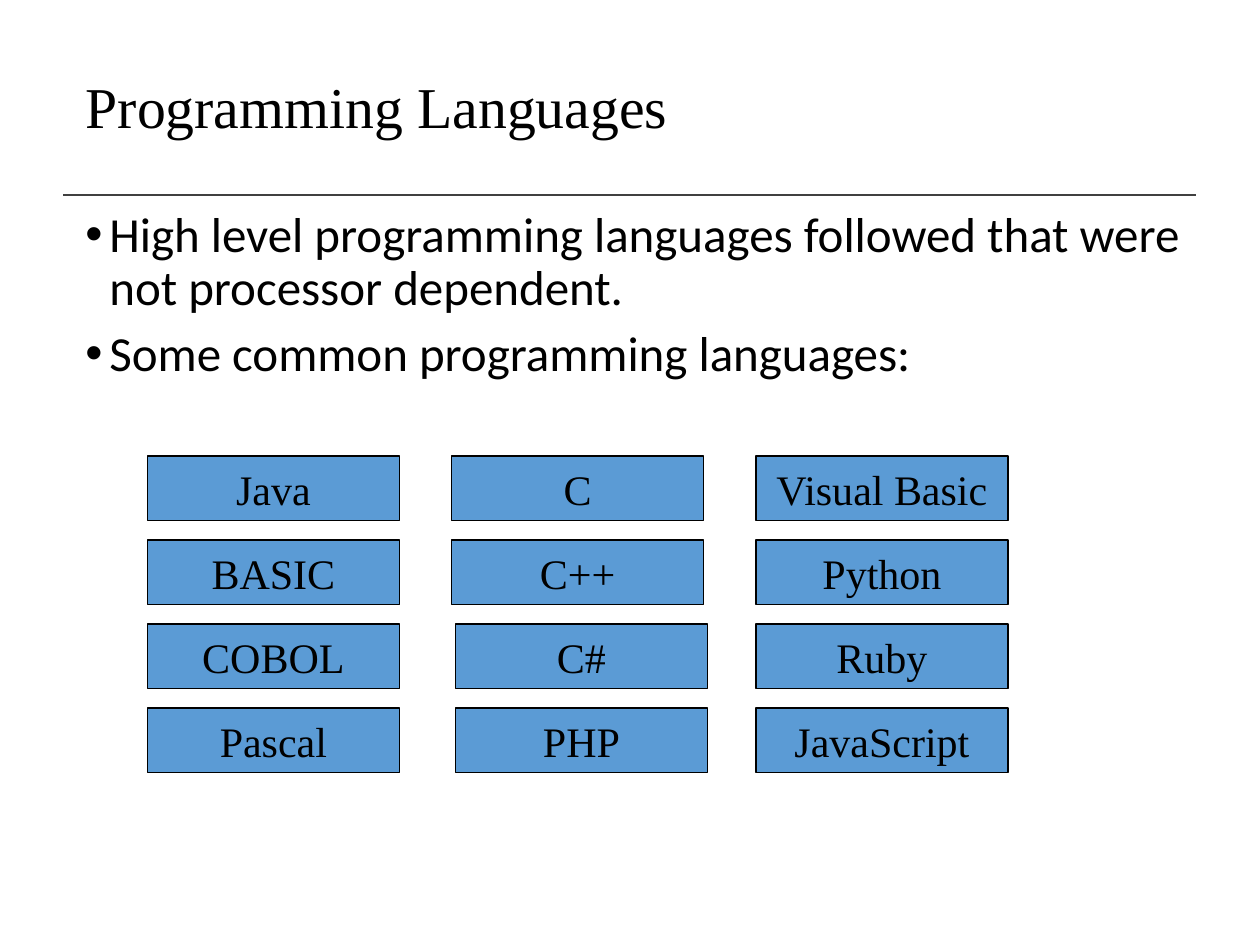
from lxml import etree
from pptx import Presentation
from pptx.dml.color import RGBColor
from pptx.enum.shapes import MSO_CONNECTOR, MSO_SHAPE
from pptx.enum.text import MSO_ANCHOR, MSO_AUTO_SIZE, PP_ALIGN
from pptx.oxml.ns import qn
from pptx.util import Inches, Pt

LINE = MSO_CONNECTOR.STRAIGHT
RECT = MSO_SHAPE.RECTANGLE
MIDDLE = MSO_ANCHOR.MIDDLE
LEFT, CENTER = PP_ALIGN.LEFT, PP_ALIGN.CENTER
NO_FIT, GROW = MSO_AUTO_SIZE.NONE, MSO_AUTO_SIZE.SHAPE_TO_FIT_TEXT

BLACK = RGBColor(0x00, 0x00, 0x00)
GRAY = RGBColor(0x40, 0x40, 0x40)
BLUE = RGBColor(0x5B, 0x9B, 0xD5)
SERIF, SANS = "Times New Roman", "Calibri"

POINTS = [
    "High level programming languages followed that were not processor dependent.",
    "Some common programming languages:",
]
COLUMNS = [
    ["Java", "BASIC", "COBOL", "Pascal"],
    ["C", "C++", "C#", "PHP"],
    ["Visual Basic", "Python", "Ruby", "JavaScript"],
]


def style(para, face, size, align):
    para.font.name = face
    para.font.size = Pt(size)
    para.font.color.rgb = BLACK
    para.alignment = align


def add_title(slide, left, top, width, height):
    title = slide.shapes.title
    title.left, title.top = Inches(left), Inches(top)
    title.width, title.height = Inches(width), Inches(height)
    frame = title.text_frame
    frame.text = "Programming Languages"
    frame.vertical_anchor = MIDDLE
    frame.auto_size = NO_FIT
    para = frame.paragraphs[0]
    style(para, SERIF, 33, LEFT)
    para.line_spacing = 0.9


def add_rule(slide, left, top, width):
    rule = slide.shapes.add_connector(
        LINE, Inches(left), Inches(top), Inches(left + width), Inches(top))
    rule.line.color.rgb = GRAY
    rule.line.width = Pt(1)
    etree.SubElement(rule.element.spPr, qn("a:effectLst"))


def add_points(slide, left, top, width, height):
    box = slide.shapes.add_textbox(
        Inches(left), Inches(top), Inches(width), Inches(height))
    frame = box.text_frame
    frame.word_wrap = True
    frame.text = "\n".join(POINTS)
    for para in frame.paragraphs:
        style(para, SANS, 28, LEFT)
        para.line_spacing = 0.9
        para.space_before = Pt(7.5)
        props = para._p.get_or_add_pPr()
        props.set("marL", str(Inches(0.19)))
        props.set("indent", str(-Inches(0.19)))
        font = etree.Element(qn("a:buFont"), typeface="Arial")
        bullet = etree.Element(qn("a:buChar"), char="•")
        props.find(qn("a:defRPr")).addprevious(font)
        font.addnext(bullet)


def add_tile(slide, name, left, top, width, height):
    tile = slide.shapes.add_shape(
        RECT, Inches(left), Inches(top), Inches(width), Inches(height))
    tile.shadow.inherit = False
    tile.fill.solid()
    tile.fill.fore_color.rgb = BLUE
    tile.line.color.rgb = BLACK
    tile.line.width = Pt(0.75)
    frame = tile.text_frame
    frame.text = name
    frame.auto_size = GROW
    style(frame.paragraphs[0], SERIF, 24, CENTER)


def add_tiles(slide, left, top, width, height):
    """Spread the languages over the box; the lower middle pair sits a little right."""
    wide, high = 2, 0.51
    across = (width - wide) / (len(COLUMNS) - 1)
    down = (height - high) / (len(COLUMNS[0]) - 1)
    for col, names in enumerate(COLUMNS):
        for row, name in enumerate(names):
            shift = 0.03 if col == 1 and row >= 2 else 0
            add_tile(slide, name, left + col * across + shift,
                     top + row * down, wide, high)


def main():
    deck = Presentation()
    deck.slide_width, deck.slide_height = Inches(10), Inches(7.5)
    slide = deck.slides.add_slide(deck.slide_layouts[5])
    add_rule(slide, 0.5, 1.55, 8.99)
    add_title(slide, 0.58, 0.33, 9.42, 1.09)
    add_points(slide, 0.58, 1.62, 9.07, 5)
    add_tiles(slide, 1.17, 3.62, 6.83, 2.51)
    deck.save("out.pptx")


if __name__ == "__main__":
    main()
